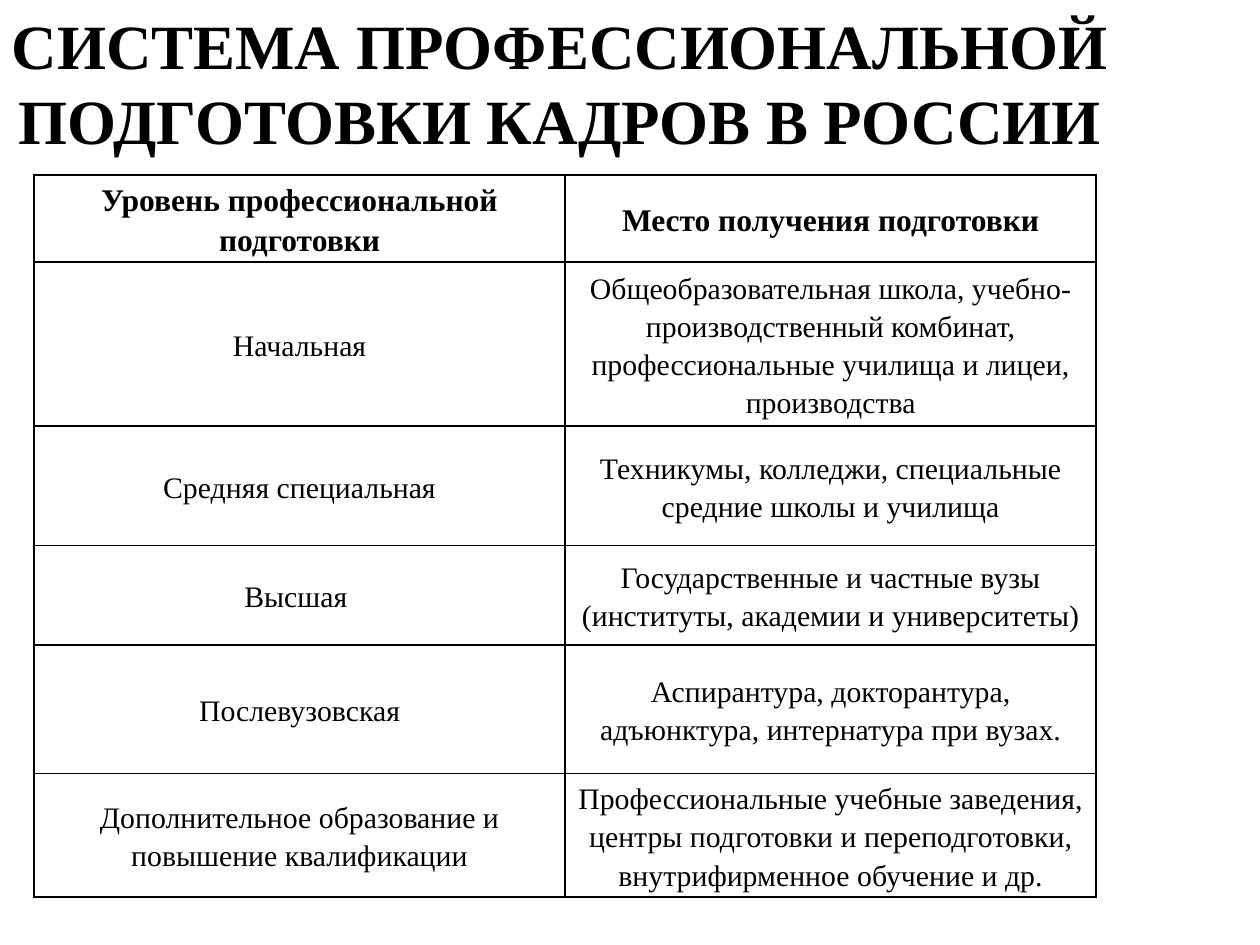
from dataclasses import dataclass

from lxml import etree
from pptx import Presentation
from pptx.dml.color import RGBColor
from pptx.enum.text import MSO_ANCHOR, PP_ALIGN
from pptx.oxml.ns import qn
from pptx.util import Inches, Pt

CENTER = PP_ALIGN.CENTER
MIDDLE = MSO_ANCHOR.MIDDLE
BLANK_LAYOUT = 6
BORDER_TAGS = ("a:lnL", "a:lnR", "a:lnT", "a:lnB")


@dataclass(frozen=True)
class Theme:
    font: str = "Times New Roman"
    ink: str = "000000"
    paper: str = "FFFFFF"
    title_size: int = 36
    header_size: int = 18
    body_size: int = 17
    line_spacing: float = 1.15
    border: float = 1
    cell_inset: float = 0.08


class SlideBuilder:
    def __init__(self, presentation, theme):
        self.theme = theme
        self.width = presentation.slide_width
        self.height = presentation.slide_height
        self.slide = presentation.slides.add_slide(
            presentation.slide_layouts[BLANK_LAYOUT])
        fill = self.slide.background.fill
        fill.solid()
        fill.fore_color.rgb = RGBColor.from_string(theme.paper)

    def box(self, left, top, width, height):
        """Turn shares of the slide's size into lengths."""
        return (int(left * self.width), int(top * self.height),
                int(width * self.width), int(height * self.height))

    def add_text(self, paragraph, text, size, bold):
        paragraph.alignment = CENTER
        run = paragraph.add_run()
        run.text = text
        run.font.name = self.theme.font
        run.font.size = Pt(size)
        run.font.bold = bold
        run.font.color.rgb = RGBColor.from_string(self.theme.ink)

    def title(self, text, *shares):
        frame = self.slide.shapes.add_textbox(*self.box(*shares)).text_frame
        frame.word_wrap = True
        self.add_text(frame.paragraphs[0], text, self.theme.title_size, True)

    def outline(self, cell):
        properties = cell._tc.get_or_add_tcPr()
        for index, tag in enumerate(BORDER_TAGS):
            line = etree.Element(qn(tag), w=str(int(Pt(self.theme.border))))
            fill = etree.SubElement(line, qn("a:solidFill"))
            etree.SubElement(fill, qn("a:srgbClr"), val=self.theme.ink)
            properties.insert(index, line)

    def cell(self, cell, text, is_header):
        theme = self.theme
        cell.fill.background()
        cell.vertical_anchor = MIDDLE
        cell.margin_left = cell.margin_right = Inches(theme.cell_inset)
        cell.margin_top = cell.margin_bottom = 0
        paragraph = cell.text_frame.paragraphs[0]
        paragraph.line_spacing = theme.line_spacing
        size = theme.header_size if is_header else theme.body_size
        self.add_text(paragraph, text, size, is_header)
        self.outline(cell)

    def table(self, rows, row_heights, *shares):
        table = self.slide.shapes.add_table(
            len(rows), len(rows[0]), *self.box(*shares)).table
        table.horz_banding = False
        for row_index, texts in enumerate(rows):
            table.rows[row_index].height = Inches(row_heights[row_index])
            for column_index, text in enumerate(texts):
                self.cell(table.cell(row_index, column_index), text, row_index == 0)


TRAINING_LEVELS = [
    ("Уровень профессиональной подготовки", "Место получения подготовки"),
    ("Начальная",
     "Общеобразовательная школа, учебно-производственный комбинат, "
     "профессиональные училища и лицеи, производства"),
    ("Средняя специальная",
     "Техникумы, колледжи, специальные средние школы и училища"),
    ("Высшая ",
     "Государственные и частные вузы (институты, академии и университеты)"),
    ("Послевузовская",
     "Аспирантура, докторантура, адъюнктура, интернатура при вузах."),
    ("Дополнительное образование и повышение квалификации",
     "Профессиональные учебные заведения, центры подготовки и переподготовки, "
     "внутрифирменное обучение и др."),
]
ROW_HEIGHTS = [0.69, 1.3, 0.95, 0.79, 1.02, 0.98]


def main():
    presentation = Presentation()
    presentation.slide_width = Inches(10)
    presentation.slide_height = Inches(7.5)
    builder = SlideBuilder(presentation, Theme())

    # Levels of training and where each is obtained
    builder.table(TRAINING_LEVELS, ROW_HEIGHTS,
                  0.027, 1.39 / 7.5, 0.843, 5.73 / 7.5)

    # Heading
    builder.title("СИСТЕМА ПРОФЕССИОНАЛЬНОЙ ПОДГОТОВКИ КАДРОВ В РОССИИ",
                  -0.028, 0, 0.945, 1.31 / 7.5)

    presentation.save("out.pptx")


if __name__ == "__main__":
    main()
